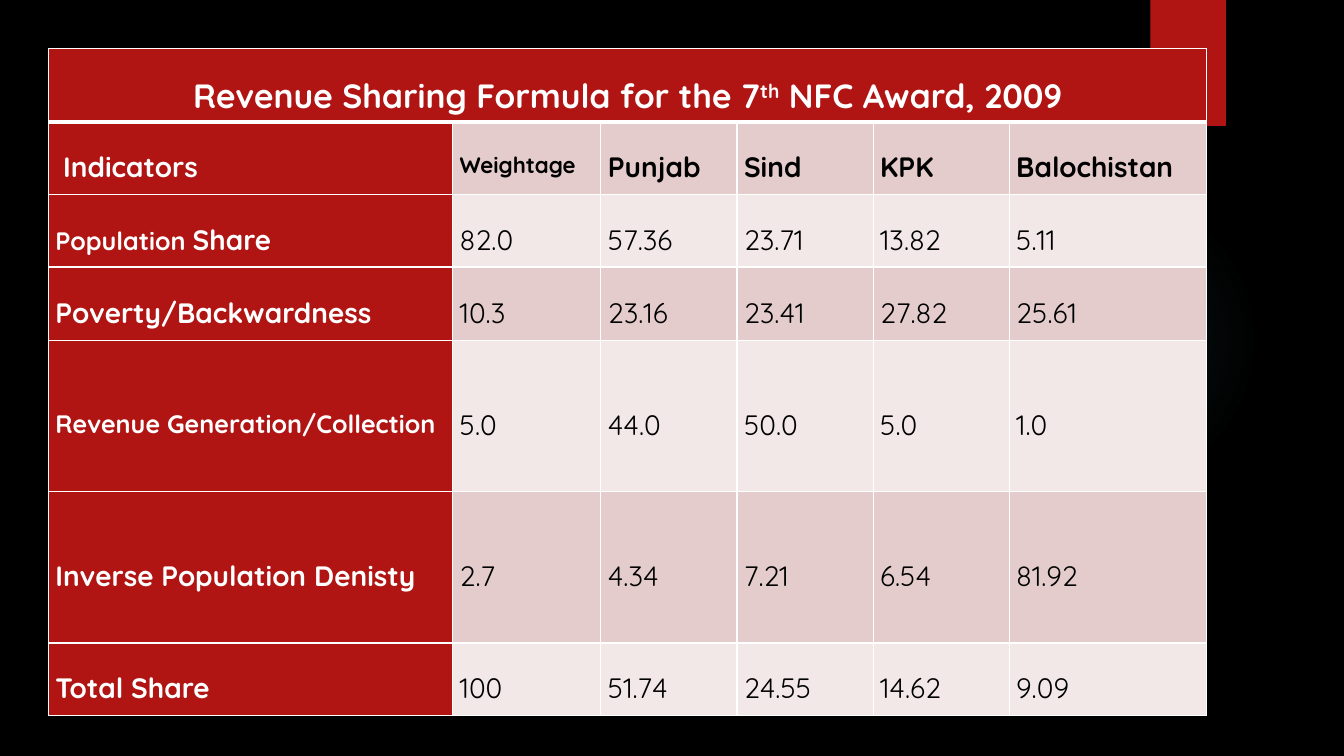
from lxml.etree import SubElement
from pptx import Presentation
from pptx.dml.color import RGBColor
from pptx.enum.shapes import MSO_SHAPE
from pptx.enum.text import MSO_ANCHOR, PP_ALIGN
from pptx.oxml import parse_xml
from pptx.oxml.ns import nsdecls, qn
from pptx.util import Inches, Pt

RED, ROSE, PALE = "B01513", "E4CCCC", "F2E8E7"
WHITE, BLACK = "FFFFFF", "000000"
FONT = "Quicksand"
COLS = [4.01, 1.47, 1.35, 1.35, 1.35, 1.96]
ROWS = [0.73, 0.72, 0.72, 0.73, 1.5, 1.5, 0.72]
# Each run is (text, size, baseline in percent)
TITLE = [("Revenue Sharing Formula for the 7", 24, 0), ("th", 24, 30),
         (" NFC Award, 2009", 24, 0)]
BODY = [
    [" Indicators", [("Weightage", 16, 0)], "Punjab", "Sind", "KPK", "Balochistan"],
    [[("Population ", 18, 0), ("Share", 20, 0)],
     "82.0", "57.36", "23.71", "13.82", "5.11"],
    ["Poverty/Backwardness", "10.3", "23.16", "23.41", "27.82", "25.61"],
    [[("Revenue Generation/Collection", 18, 0)],
     "5.0", "44.0", "50.0", "5.0", "1.0"],
    ["Inverse Population Denisty", "2.7", "4.34", "7.21", "6.54", "81.92"],
    ["Total Share", "100", "51.74", "24.55", "14.62", "9.09"],
]


def color(code):
    return RGBColor.from_string(code)


def paint(fill, code):
    fill.solid()
    fill.fore_color.rgb = color(code)


def add_plain(slide, kind, box):
    """Add a preset shape with no line and no shadow."""
    shape = slide.shapes.add_shape(kind, *map(Inches, box))
    shape.line.fill.background()
    shape.shadow.inherit = False
    return shape


def add_glow(slide):
    glow = add_plain(slide, MSO_SHAPE.OVAL, (9.41, 1.83, 3.08, 3.08))
    glow.fill.background()
    props = glow._element.spPr
    stops = "".join(
        f'<a:gs pos="{pos * 1000}"><a:srgbClr val="50B9C1">'
        f'<a:alpha val="{alpha * 1000}"/></a:srgbClr></a:gs>'
        for pos, alpha in [(0, 7), (36, 6), (69, 0)])
    grad = parse_xml(
        f'<a:gradFill {nsdecls("a")}><a:gsLst>{stops}</a:gsLst>'
        '<a:path path="circle"><a:fillToRect l="50000" t="50000" '
        'r="50000" b="50000"/></a:path></a:gradFill>')
    props.replace(props.find(qn("a:noFill")), grad)


def add_tab(slide):
    tab = add_plain(slide, MSO_SHAPE.RECTANGLE, (11.41, 0, 0.75, 1.25))
    paint(tab.fill, RED)
    tab._element.spPr.find(qn("a:effectLst")).append(parse_xml(
        f'<a:outerShdw {nsdecls("a")} blurRad="{Pt(3)}" dist="{Pt(2)}" '
        'dir="5400000"><a:srgbClr val="000000"><a:alpha val="45000"/>'
        '</a:srgbClr></a:outerShdw>'))


def set_edges(cell, top, bottom):
    """Draw white borders; top and bottom widths are in points."""
    props = cell._tc.get_or_add_tcPr()
    for side, width in zip("LRTB", (1, 1, top, bottom)):
        line = SubElement(props, qn(f"a:ln{side}"), w=str(Pt(width)))
        fill = SubElement(line, qn("a:solidFill"))
        SubElement(fill, qn("a:srgbClr"), val=WHITE)


def fill_cell(cell, runs, ink, bold, align):
    style = {"vertical_anchor": MSO_ANCHOR.MIDDLE,
             "margin_left": Inches(0.07), "margin_right": Inches(0.07),
             "margin_top": 0, "margin_bottom": 0}
    for name, value in style.items():
        setattr(cell, name, value)
    para = cell.text_frame.paragraphs[0]
    para.alignment = align
    para.line_spacing = 1.5
    if isinstance(runs, str):
        runs = [(runs, 20, 0)]
    for text, size, base in runs:
        run = para.add_run()
        run.text = text
        for name, value in {"size": Pt(size), "name": FONT, "bold": bold}.items():
            setattr(run.font, name, value)
        run.font.color.rgb = color(ink)
        if base:
            run._r.get_or_add_rPr().set("baseline", str(base * 1000))


def add_grid(slide):
    frame = slide.shapes.add_table(
        len(ROWS), len(COLS), Inches(0.48), Inches(0.48),
        Inches(sum(COLS)), Inches(sum(ROWS)))
    table = frame.table
    for col, width in zip(table.columns, COLS):
        col.width = Inches(width)
    for row, height in zip(table.rows, ROWS):
        row.height = Inches(height)
    for r in range(len(ROWS)):
        for c in range(len(COLS)):
            cell = table.cell(r, c)
            set_edges(cell, 3 if r == 1 else 1, 3 if r == 0 else 1)
            head = r == 0 or c == 0
            paint(cell.fill, RED if head else ROSE if r % 2 else PALE)
            if r:
                fill_cell(cell, BODY[r - 1][c], WHITE if head else BLACK,
                          head or r == 1, PP_ALIGN.LEFT)
    title = table.cell(0, 0)
    title.merge(table.cell(0, len(COLS) - 1))
    fill_cell(title, TITLE, WHITE, True, PP_ALIGN.CENTER)


def main():
    deck = Presentation()
    deck.slide_width, deck.slide_height = Inches(13.33), Inches(7.5)
    slide = deck.slides.add_slide(deck.slide_layouts[6])
    paint(slide.background.fill, BLACK)
    add_glow(slide)
    add_tab(slide)
    add_grid(slide)
    deck.save("out.pptx")


if __name__ == "__main__":
    main()
